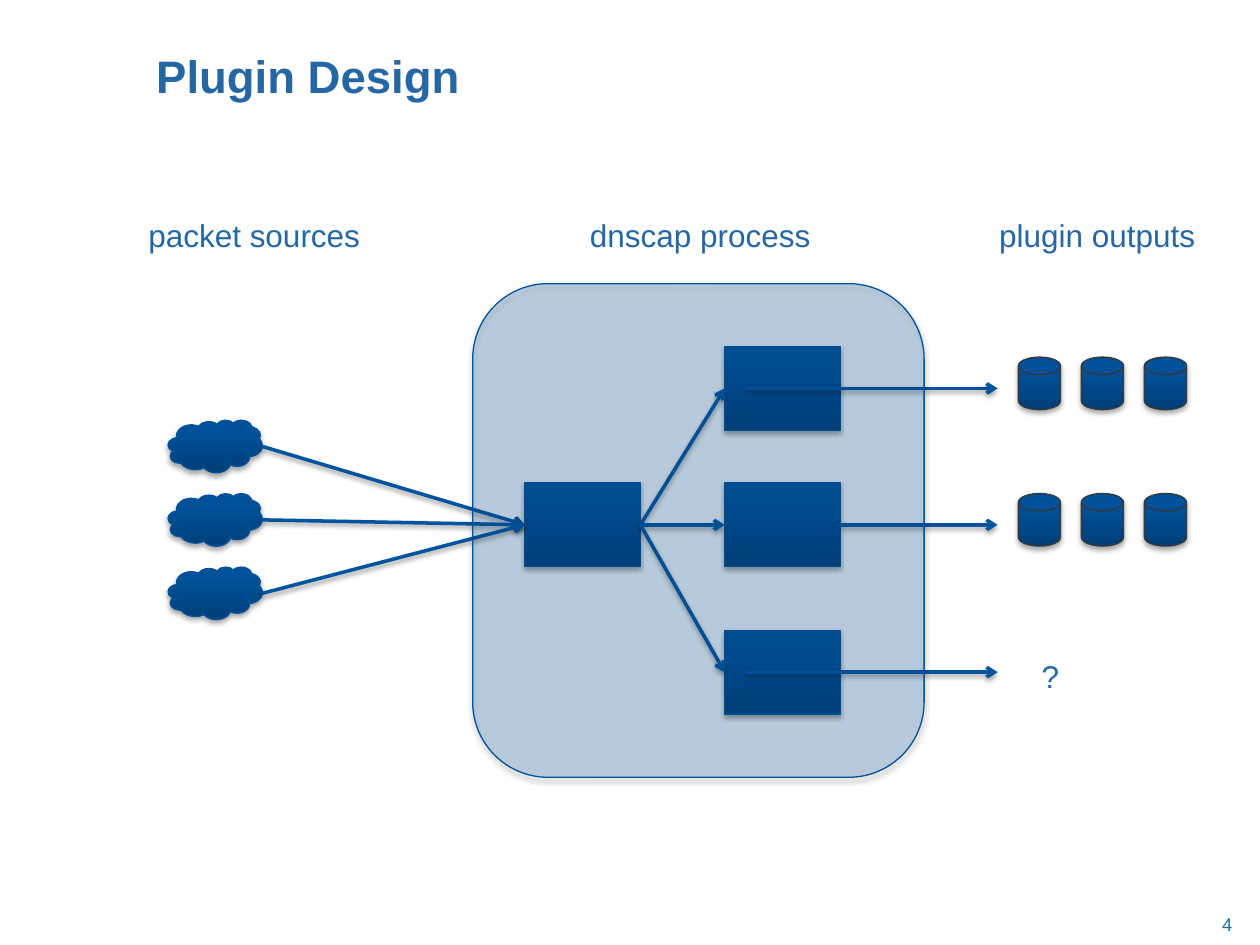
from copy import deepcopy

from lxml.etree import SubElement
from pptx import Presentation
from pptx.dml.color import RGBColor
from pptx.enum.shapes import MSO_CONNECTOR as Link, MSO_SHAPE as Form
from pptx.enum.text import MSO_ANCHOR as Anchor, PP_ALIGN as Align
from pptx.oxml.ns import qn
from pptx.util import Cm, Pt

TEXT_BLUE = RGBColor(0x24, 0x67, 0xA4)
LINE_BLUE = RGBColor(0x00, 0x54, 0x9F)
EDGE_BLUE = RGBColor(0x00, 0x52, 0x9B)
EDGE_GREY = RGBColor(0x38, 0x38, 0x38)
BLUE_STOPS = [
    (0, RGBColor(0x00, 0x3F, 0x77)),
    (0.8, RGBColor(0x00, 0x51, 0x9A)),
    (1, EDGE_BLUE),
]
LEFT, RIGHT = 1, 3


class Diagram:
    def __init__(self, page):
        self.page = page
        self.font = {"name": "Arial", "size": Pt(18), "bold": False}

    def text(self, words, left, top, width, height, wrap=False,
             anchor=Anchor.TOP, align=Align.LEFT, **changes):
        box = self.page.shapes.add_textbox(Cm(left), Cm(top), Cm(width), Cm(height))
        frame = box.text_frame
        frame.word_wrap = wrap
        frame.vertical_anchor = anchor
        para = frame.paragraphs[0]
        para.alignment = align
        span = para.add_run()
        span.text = words
        for name, value in {**self.font, **changes}.items():
            setattr(span.font, name, value)
        span.font.color.rgb = TEXT_BLUE

    def shadow(self, effects, opacity, distance):
        outer = SubElement(effects, qn("a:outerShdw"), blurRad=str(Pt(3.1)),
                           dist=str(Pt(distance)), dir="5400000", rotWithShape="0")
        color = SubElement(outer, qn("a:srgbClr"), val="000000")
        SubElement(color, qn("a:alpha"), val=str(opacity * 1000))

    def outline(self, form, left, top, width, height, edge):
        shape = self.page.shapes.add_shape(form, Cm(left), Cm(top), Cm(width), Cm(height))
        shape.line.color.rgb = edge
        shape.line.width = Pt(0.75)
        shape.shadow.inherit = False
        self.shadow(shape._element.spPr.find(qn("a:effectLst")), 35, 1.8)
        return shape

    def solid(self, form, left, top, width, height, edge=EDGE_BLUE):
        shape = self.outline(form, left, top, width, height, edge)
        shape.fill.gradient()
        shape.fill.gradient_angle = 90
        stops = next(shape._element.spPr.iter(qn("a:gsLst")))
        stops.append(deepcopy(stops[-1]))
        for stop, (position, color) in zip(shape.fill.gradient_stops, BLUE_STOPS):
            stop.position = position
            stop.color.rgb = color
        return shape

    def panel(self, left, top, width, height, opacity):
        shape = self.outline(Form.ROUNDED_RECTANGLE, left, top, width, height, EDGE_BLUE)
        shape.fill.solid()
        shape.fill.fore_color.rgb = LINE_BLUE
        color = shape._element.spPr.find(qn("a:solidFill"))[0]
        SubElement(color, qn("a:alpha"), val=str(opacity * 1000))

    def arrow(self, start, end, source=None, target=None):
        points = [Cm(value) for value in (*start, *end)]
        line = self.page.shapes.add_connector(Link.STRAIGHT, *points)
        if source is not None:
            line.begin_connect(source, RIGHT)
        if target is not None:
            line.end_connect(target, LEFT)
        line.line.color.rgb = LINE_BLUE
        line.line.width = Pt(2)
        properties = line._element.spPr
        SubElement(properties.find(qn("a:ln")), qn("a:tailEnd"), type="arrow")
        self.shadow(SubElement(properties, qn("a:effectLst")), 38, 1.6)


def main():
    deck = Presentation()
    deck.slide_width, deck.slide_height = Cm(25.4), Cm(19.05)
    diagram = Diagram(deck.slides.add_slide(deck.slide_layouts[6]))

    diagram.text("4", 24.2, 18.26, 0.89, 0.71, anchor=Anchor.BOTTOM,
                 align=Align.RIGHT, size=Pt(10.5))
    diagram.text("Plugin Design", 2.9, 0.84, 22.1, 2.11, wrap=True,
                 size=Pt(26), bold=True)
    for words, left, width in [("packet sources", 2.74, 4.83),
                               ("dnscap process", 11.64, 5),
                               ("plugin outputs", 19.89, 4.5)]:
        diagram.text(words, left, 4.24, width, 1.02)

    box_width, box_height = 2.33, 1.69
    core_left, plugin_left, middle = 10.58, 14.61, 10.58
    core = diagram.solid(Form.RECTANGLE, core_left, middle - box_height / 2,
                         box_width, box_height)
    for index in range(3):
        top = 8.47 + 1.48 * index
        diagram.solid(Form.CLOUD, 3.39, top, 1.9, 1.06)
        diagram.arrow((5.29, top + 0.53), (core_left, middle), target=core)

    for center, start, disks in [(7.83, 15.03, 3), (middle, None, 3), (13.55, 15.03, 0)]:
        plugin = diagram.solid(Form.RECTANGLE, plugin_left, center - box_height / 2,
                               box_width, box_height)
        diagram.arrow((core_left + box_width, middle), (plugin_left, center), core, plugin)
        diagram.arrow((start or plugin_left + box_width, center), (20.11, center),
                      source=None if start else plugin)
        for index in range(disks):
            diagram.solid(Form.FLOWCHART_MAGNETIC_DISK, 20.53 + 1.27 * index,
                          center - 0.63, 0.85, 1.06, EDGE_GREY)

    diagram.text("?", 20.75, 13.13, 0.86, 1.02)
    diagram.panel(9.53, 5.72, 9.1, 9.95, opacity=22)
    deck.save("out.pptx")


if __name__ == "__main__":
    main()
